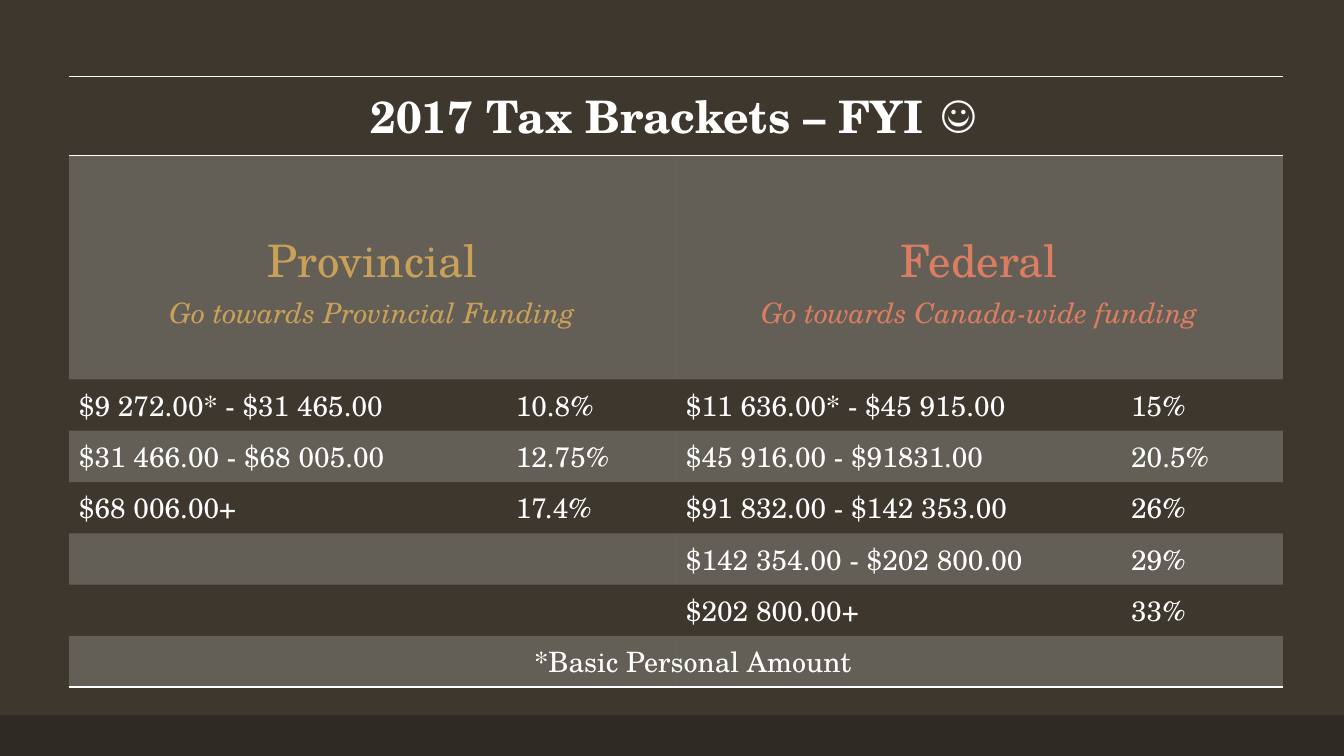
"""Build a slide with a table of 2017 tax brackets."""
from lxml.etree import SubElement as Sub
from pptx import Presentation
from pptx.dml.color import RGBColor as RGB
from pptx.enum.shapes import MSO_SHAPE as Shape
from pptx.enum.text import PP_ALIGN as Align
from pptx.oxml.ns import qn
from pptx.util import Pt

BACK = RGB(0x3D, 0x37, 0x2E)
BAND = RGB(0x2E, 0x29, 0x23)
WHITE = RGB(0xFF, 0xFF, 0xFF)
GOLD = RGB(0xC9, 0xA0, 0x57)
CORAL = RGB(0xDA, 0x7D, 0x60)
FONT = "TeX Gyre Schola"

TITLE = "2017 Tax Brackets – FYI ☺"
NOTE = "*Basic Personal Amount"
LEVELS = [
    ("Provincial", "Go towards Provincial Funding", GOLD, 312, [
        ("$9 272.00* - $31 465.00", "10.8%"),
        ("$31 466.00 - $68 005.00", "12.75%"),
        ("$68 006.00+", "17.4%"),
    ]),
    ("Federal", "Go towards Canada-wide funding", CORAL, 318, [
        ("$11 636.00* - $45 915.00", "15%"),
        ("$45 916.00 - $91831.00", "20.5%"),
        ("$91 832.00 - $142 353.00", "26%"),
        ("$142 354.00 - $202 800.00", "29%"),
        ("$202 800.00+", "33%"),
    ]),
]
WIDE, HIGH = 960, 540
LEFT, TOP, COL = 49.2, 54.4, 433.6
ROWS = [56.4, 160] + [36.6] * 6


def write(para, text, size=20, color=WHITE, bold=False, italic=False):
    run = para.add_run()
    run.text = text
    font = run.font
    font.name, font.size = FONT, Pt(size)
    font.bold, font.italic = bold, italic
    font.color.rgb = color


def rule(cell, side):
    line = Sub(cell._tc.get_or_add_tcPr(), qn("a:" + side), w=str(Pt(1)))
    fill = Sub(line, qn("a:solidFill"))
    Sub(fill, qn("a:srgbClr"), val=str(WHITE))


def shade(cell):
    cell.fill.solid()
    cell.fill.fore_color.rgb = WHITE
    tint = cell._tc.tcPr.find(qn("a:solidFill"))[0]
    Sub(tint, qn("a:alpha"), val="20000")


def stop(para, place):
    tabs = Sub(para._p.get_or_add_pPr(), qn("a:tabLst"))
    Sub(tabs, qn("a:tab"), pos=str(Pt(place)), algn="l")


def add_grid(slide):
    last = len(ROWS) - 1
    grid = slide.shapes.add_table(
        len(ROWS), 2, Pt(LEFT), Pt(TOP), Pt(2 * COL), Pt(sum(ROWS))).table
    grid.first_row = grid.horz_banding = False
    style = grid._tbl.tblPr.find(qn("a:tableStyleId"))
    style.text = "{2D5ABB26-0587-4C30-8999-92F81FD0307C}"
    for row, height in zip(grid.rows, ROWS):
        row.height = Pt(height)
    for col in range(2):
        grid.columns[col].width = Pt(COL)
        rule(grid.cell(0, col), "lnT")
        rule(grid.cell(0, col), "lnB")
        rule(grid.cell(last, col), "lnB")
        for row in range(len(ROWS)):
            if row % 2:
                shade(grid.cell(row, col))
            else:
                grid.cell(row, col).fill.background()
    head = grid.cell(0, 0)
    head.merge(grid.cell(0, 1))
    para = head.text_frame.paragraphs[0]
    para.alignment = Align.CENTER
    write(para, TITLE, 32, bold=True)
    for col, (name, goal, color, place, rates) in enumerate(LEVELS):
        cell = grid.cell(1, col)
        cell.margin_top = Pt(50.6)
        frame = cell.text_frame
        first, second = frame.paragraphs[0], frame.add_paragraph()
        first.alignment = second.alignment = Align.CENTER
        write(first, name, 32, color)
        write(second, goal, 20, color, italic=True)
        for row, (span, rate) in enumerate(rates, 2):
            para = grid.cell(row, col).text_frame.paragraphs[0]
            stop(para, place)
            write(para, span + "\t" + rate)


def main():
    deck = Presentation()
    deck.slide_width, deck.slide_height = Pt(WIDE), Pt(HIGH)
    slide = deck.slides.add_slide(deck.slide_layouts[6])
    slide.background.fill.solid()
    slide.background.fill.fore_color.rgb = BACK
    band = slide.shapes.add_shape(
        Shape.RECTANGLE, 0, Pt(511), Pt(WIDE), Pt(29))
    band.shadow.inherit = False
    band.fill.solid()
    band.fill.fore_color.rgb = BAND
    band.line.fill.background()
    add_grid(slide)
    note = slide.shapes.add_textbox(Pt(1), Pt(457), Pt(988), Pt(31.6))
    note.text_frame.word_wrap = True
    para = note.text_frame.paragraphs[0]
    para.alignment = Align.CENTER
    write(para, NOTE)
    deck.save("out.pptx")


if __name__ == "__main__":
    main()
